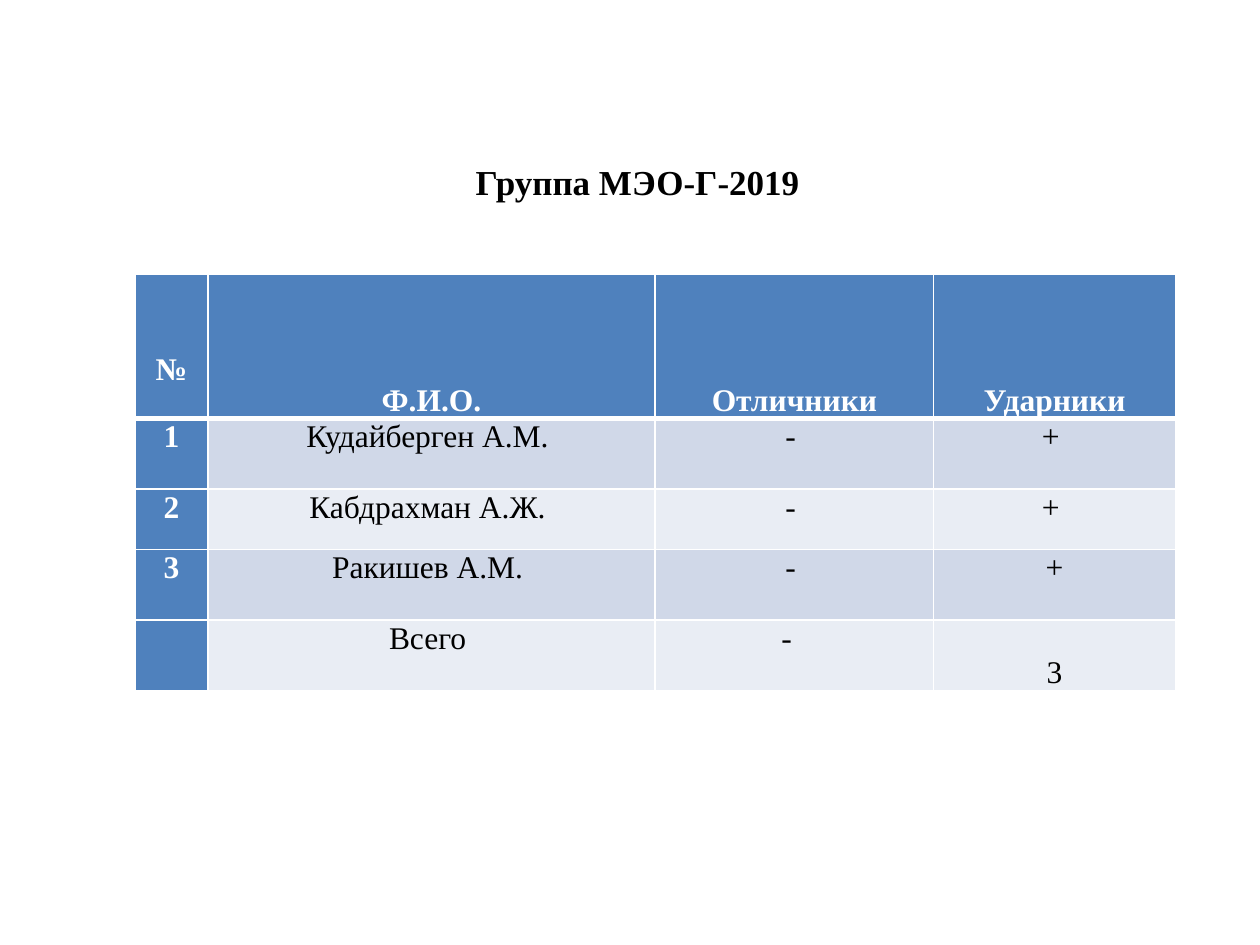
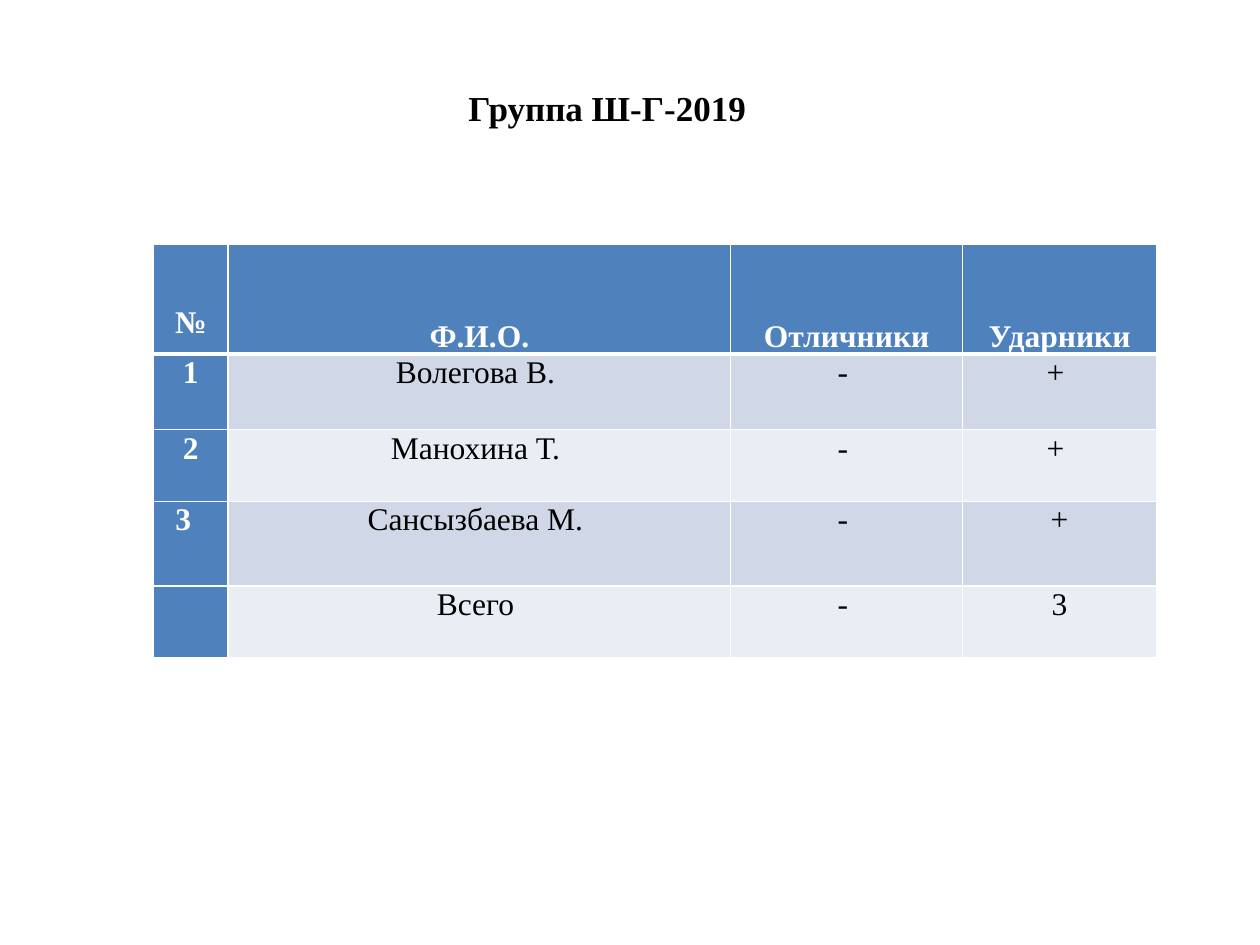
from dataclasses import dataclass

import pptx
import pptx.dml.color
import pptx.enum.text
import pptx.oxml.ns
import pptx.slide
import pptx.table
import pptx.text.text
import pptx.util
from lxml import etree
from pptx.dml.color import RGBColor
from pptx.enum.text import MSO_ANCHOR, PP_ALIGN
from pptx.util import Inches

FONT = "Times New Roman"
TITLE_SIZE = pptx.util.Pt(20)
TABLE_SIZE = pptx.util.Pt(18)
BLACK = RGBColor(0x00, 0x00, 0x00)
WHITE = RGBColor(0xFF, 0xFF, 0xFF)
HEADER_BLUE = RGBColor(0x4F, 0x81, 0xBD)
BAND_FILLS = (RGBColor(0xE9, 0xED, 0xF4), RGBColor(0xD0, 0xD8, 0xE8))
HEADINGS = ("№", "Ф.И.О.", "Отличники", "Ударники")
NUMBER_DROP = 0.33  # lowers the "№" heading by one line
SPACE_WIDTH = 0.06


@dataclass(frozen=True)
class CellStyle:
    fill: RGBColor
    color: RGBColor
    bold: bool
    anchor: MSO_ANCHOR
    side_margin: float
    top_margin: float
    line_spacing: float
    bottom_border: int


@dataclass(frozen=True)
class GroupPage:
    title: str
    title_box: tuple[float, float, float, float]
    table_corner: tuple[float, float]
    column_widths: tuple[float, ...]
    row_heights: tuple[float, ...]
    rows: tuple[tuple[str, ...], ...]
    shifted_cell: tuple[int, int]  # its text sits slightly left of centre
    total_anchor: MSO_ANCHOR


PAGES = (
    GroupPage(
        "Группа МЭО-Г-2019",
        (0.75, 0.99, 8.62, 0.9),
        (1.07, 2.18),
        (0.58, 3.55, 2.21, 1.92),
        (1.14, 0.56, 0.48, 0.56, 0.56),
        (
            ("1", "Кудайберген А.М. ", "- ", "+ "),
            ("2", "Кабдрахман А.Ж. ", "- ", "+ "),
            ("3", "Ракишев А.М. ", "- ", "+"),
            ("", "Всего ", "- ", "3"),
        ),
        (4, 2),
        MSO_ANCHOR.BOTTOM,
    ),
    GroupPage(
        "Группа Ш-Г-2019",
        (0.51, 0.36, 8.62, 0.99),
        (1.22, 1.94),
        (0.59, 3.99, 1.84, 1.54),
        (0.87, 0.6, 0.57, 0.67, 0.57),
        (
            ("1", "Волегова В. ", "- ", "+ "),
            ("2", "Манохина Т. ", "- ", "+ "),
            ("3 ", "Сансызбаева М. ", "- ", "+"),
            ("", "Всего ", "- ", "3"),
        ),
        (3, 0),
        MSO_ANCHOR.TOP,
    ),
)


def format_paragraph(para: pptx.text.text._Paragraph, size: pptx.util.Length,
                     color: RGBColor, bold: bool) -> None:
    para.alignment = PP_ALIGN.CENTER
    para.font.name = FONT
    para.font.size = size
    para.font.bold = bold
    para.font.color.rgb = color


def add_border(cell: pptx.table._Cell, side: str, points: int) -> None:
    properties = cell._tc.get_or_add_tcPr()
    line = etree.SubElement(properties, pptx.oxml.ns.qn(f"a:{side}"),
                            w=str(pptx.util.Pt(points)))
    fill = etree.SubElement(line, pptx.oxml.ns.qn("a:solidFill"))
    etree.SubElement(fill, pptx.oxml.ns.qn("a:srgbClr"), val=str(WHITE))


def style_for(row: int, column: int, page: GroupPage) -> CellStyle:
    """Choose the look of a cell from its place in the table."""
    if row == 0:
        is_number = column == 0
        return CellStyle(
            HEADER_BLUE, WHITE, True,
            MSO_ANCHOR.MIDDLE if is_number else MSO_ANCHOR.BOTTOM,
            0.07, NUMBER_DROP if is_number else 0, 1.15, 3)
    is_label = column == 0
    is_total = (row, column) == (len(page.rows), len(HEADINGS) - 1)
    return CellStyle(
        HEADER_BLUE if is_label else BAND_FILLS[row % 2],
        WHITE if is_label else BLACK, is_label,
        page.total_anchor if is_total else MSO_ANCHOR.TOP,
        0.01, 0.01, 1.0, 1)


def fill_cell(cell: pptx.table._Cell, text: str, style: CellStyle,
              extra_right: float) -> None:
    sides = {"lnL": 1, "lnR": 1, "lnB": style.bottom_border}
    for side, points in sides.items():
        add_border(cell, side, points)
    cell.fill.solid()
    cell.fill.fore_color.rgb = style.fill
    cell.vertical_anchor = style.anchor
    cell.margin_left = Inches(style.side_margin)
    cell.margin_right = Inches(style.side_margin + extra_right)
    cell.margin_top = Inches(style.top_margin)
    cell.margin_bottom = 0
    cell.text = text
    para = cell.text_frame.paragraphs[0]
    para.line_spacing = style.line_spacing
    format_paragraph(para, TABLE_SIZE, style.color, style.bold)


def add_title(slide: pptx.slide.Slide, page: GroupPage) -> None:
    title = slide.shapes.title
    title.left, title.top, title.width, title.height = map(Inches, page.title_box)
    title.text_frame.text = page.title
    title.text_frame.vertical_anchor = MSO_ANCHOR.MIDDLE
    format_paragraph(title.text_frame.paragraphs[0], TITLE_SIZE, BLACK, True)


def add_results_table(slide: pptx.slide.Slide, page: GroupPage) -> None:
    left, top = page.table_corner
    table = slide.shapes.add_table(
        len(page.row_heights), len(HEADINGS), Inches(left), Inches(top),
        Inches(sum(page.column_widths)), Inches(sum(page.row_heights))).table
    table.first_col = True
    for column, width in zip(table.columns, page.column_widths):
        column.width = Inches(width)
    for row, height in zip(table.rows, page.row_heights):
        row.height = Inches(height)
    for row_index, texts in enumerate((HEADINGS, *page.rows)):
        for column_index, text in enumerate(texts):
            shifted = (row_index, column_index) == page.shifted_cell
            fill_cell(table.cell(row_index, column_index), text,
                      style_for(row_index, column_index, page),
                      SPACE_WIDTH if shifted else 0)


def main() -> None:
    deck = pptx.Presentation()
    deck.slide_width, deck.slide_height = Inches(10), Inches(7.5)
    title_only = deck.slide_layouts.get_by_name("Title Only")
    for page in PAGES:
        slide = deck.slides.add_slide(title_only)
        add_title(slide, page)
        add_results_table(slide, page)
    deck.save("out.pptx")


if __name__ == "__main__":
    main()
